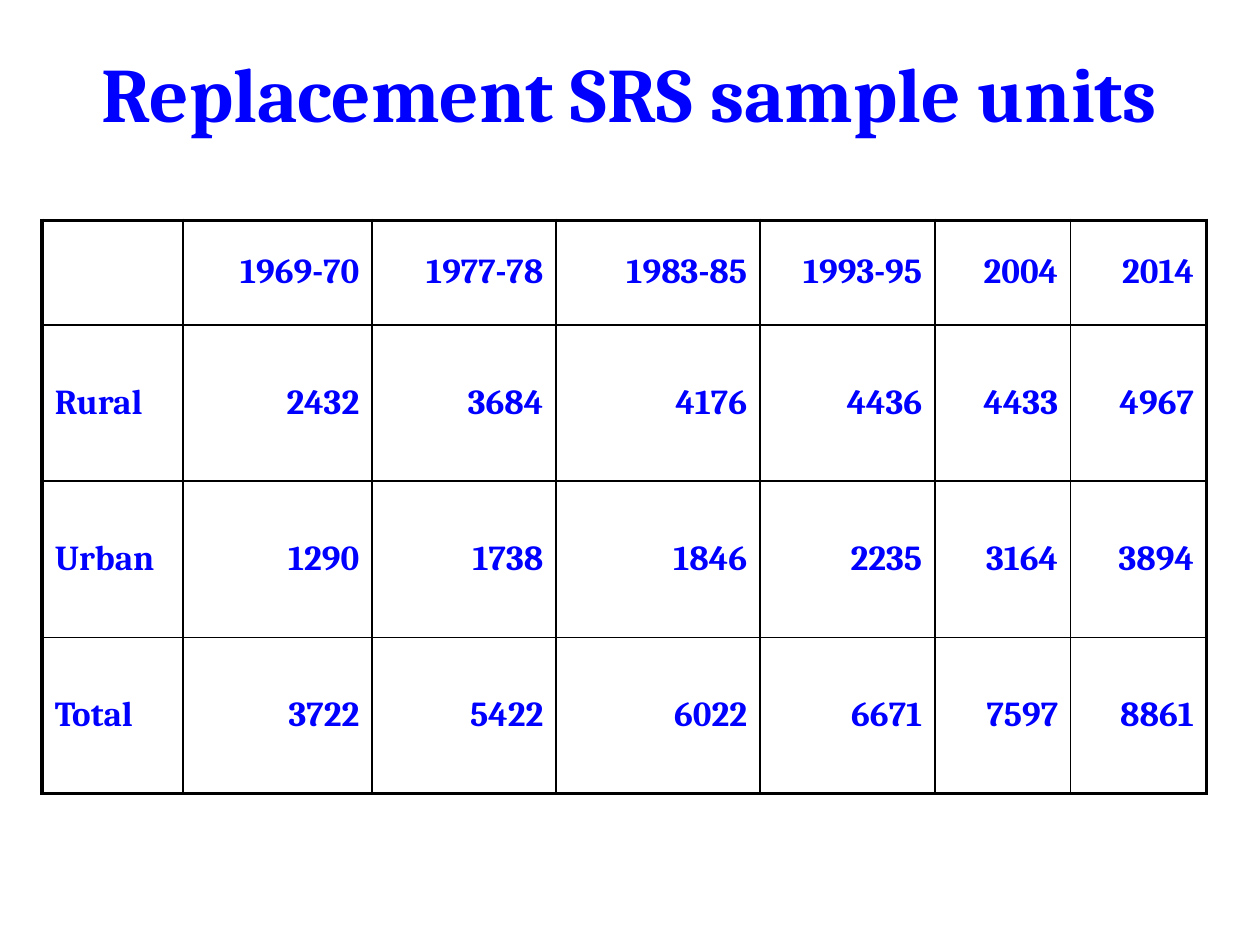
from lxml import etree
from pptx import Presentation
from pptx import util as u
from pptx.dml.color import RGBColor
from pptx.enum import text
from pptx.oxml.ns import qn

BLUE = RGBColor(0x00, 0x00, 0xFF)
BLACK = RGBColor(0x00, 0x00, 0x00)
FONT = "Cambria"
INNER, OUTER = u.Pt(1), u.Pt(2.25)

COL_WIDTHS = [2.84, 3.81, 3.71, 4.11, 3.53, 2.74, 2.74]
ROW_HEIGHTS = [2.11, 3.15, 3.15, 3.15]
SAMPLE_UNITS = [
    ["", "1969-70", "1977-78", "1983-85", "1993-95", "2004", "2014"],
    ["Rural", "2432", "3684", "4176", "4436", "4433", "4967"],
    ["Urban", "1290", "1738", "1846", "2235", "3164", "3894"],
    ["Total", "3722", "5422", "6022", "6671", "7597", "8861"],
]


def write(p, content, size, align):
    p.alignment = align
    r = p.add_run()
    r.text = content
    fmt = {"name": FONT, "size": u.Pt(size), "bold": True}
    for name, value in fmt.items():
        setattr(r.font, name, value)
    r.font.color.rgb = BLUE


def set_borders(cell, widths):
    """Draw black borders; widths maps L, R, T, B (in that order) to a width."""
    tc_pr = cell._tc.get_or_add_tcPr()
    for i, (side, width) in enumerate(widths.items()):
        ln = etree.Element(qn(f"a:ln{side}"), w=str(int(width)))
        fill = etree.SubElement(ln, qn("a:solidFill"))
        etree.SubElement(fill, qn("a:srgbClr"), val=str(BLACK))
        tc_pr.insert(i, ln)  # borders come before the cell fill


def add_title(s, left, top, width, height):
    tf = s.shapes.add_textbox(left, top, width, height).text_frame
    tf.word_wrap = True
    tf.vertical_anchor = text.MSO_ANCHOR.MIDDLE
    write(tf.paragraphs[0], "Replacement SRS sample units", 44, text.PP_ALIGN.CENTER)


def add_units_table(s, left, top, width, height):
    n_rows, n_cols = len(SAMPLE_UNITS), len(SAMPLE_UNITS[0])
    table = s.shapes.add_table(n_rows, n_cols, left, top, width, height).table
    table.first_row = table.horz_banding = False

    # Column widths and row heights share out the given box
    for col, share in zip(table.columns, COL_WIDTHS):
        col.width = int(width * share / sum(COL_WIDTHS))
    for row, share in zip(table.rows, ROW_HEIGHTS):
        row.height = int(height * share / sum(ROW_HEIGHTS))

    # Labels to the left, figures to the right, thick outer frame
    for i, values in enumerate(SAMPLE_UNITS):
        for j, value in enumerate(values):
            cell = table.cell(i, j)
            cell.fill.background()
            cell.vertical_anchor = text.MSO_ANCHOR.MIDDLE
            on_edge = {"L": j == 0, "R": j == n_cols - 1,
                       "T": i == 0, "B": i == n_rows - 1}
            set_borders(cell, {k: OUTER if edge else INNER for k, edge in on_edge.items()})
            if value:
                p = cell.text_frame.paragraphs[0]
                p.space_before = u.Pt(4)
                write(p, value, 20, text.PP_ALIGN.RIGHT if j else text.PP_ALIGN.LEFT)


def main():
    prs = Presentation()
    prs.slide_width, prs.slide_height = u.Cm(25.4), u.Cm(19.05)
    s = prs.slides.add_slide(prs.slide_layouts[6])
    add_title(s, u.Cm(1.27), u.Cm(0.76), u.Cm(22.86), u.Cm(2.16))
    add_units_table(s, u.Cm(0.85), u.Cm(4.44), u.Cm(23.48), u.Cm(11.56))
    prs.save("out.pptx")


if __name__ == "__main__":
    main()
